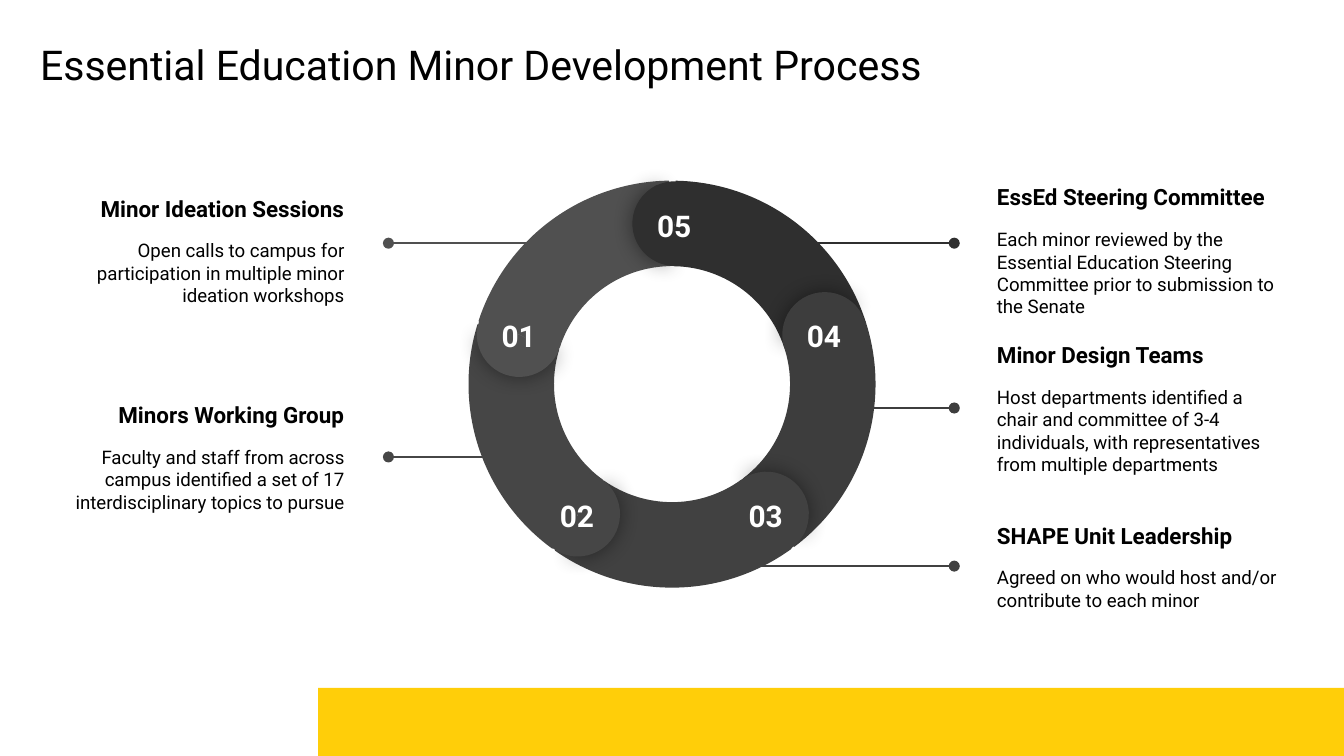
import math
from typing import NamedTuple

import pptx
import pptx.dml.color
import pptx.enum.shapes
import pptx.enum.text
import pptx.oxml
import pptx.util
from lxml import etree

Pt = pptx.util.Pt
RGBColor = pptx.dml.color.RGBColor
MSO_SHAPE = pptx.enum.shapes.MSO_SHAPE
PP_ALIGN = pptx.enum.text.PP_ALIGN
MSO_ANCHOR = pptx.enum.text.MSO_ANCHOR

BLACK = RGBColor(0x00, 0x00, 0x00)
WHITE = RGBColor(0xFF, 0xFF, 0xFF)
YELLOW = RGBColor(0xFF, 0xCE, 0x09)
GREY_01 = RGBColor(0x50, 0x50, 0x50)
GREY_02 = RGBColor(0x46, 0x46, 0x46)
GREY_03 = RGBColor(0x41, 0x41, 0x41)
GREY_04 = RGBColor(0x3D, 0x3D, 0x3D)
GREY_05 = RGBColor(0x2F, 0x2F, 0x2F)

FONT = "Roboto"
INSET = 7.2
RING_X, RING_Y = 360, 205.8
RING_SIZE = 218
CAP_SIZE = 45.4
CAP_ORBIT = 86
DEGREE = 0.6  # one degree in python-pptx adjustment units
DRAWING_NS = "http://schemas.openxmlformats.org/drawingml/2006/main"


class Box(NamedTuple):
    left: float
    top: float
    width: float
    height: float

    def lengths(self) -> list:
        return [Pt(value) for value in self]


class Stage(NamedTuple):
    number: str
    heading: str
    detail: str
    grey: RGBColor
    angle: float
    on_left: bool
    text_top: float
    line_y: float
    line_start: float


STAGES = [
    Stage("01", "Minor Ideation Sessions",
          "Open calls to campus for participation in multiple minor ideation workshops",
          GREY_01, 198, True, 97.9, 130.3, 304.6),
    Stage("02", "Minors Working Group",
          "Faculty and staff from across campus identified a set of 17 "
          "interdisciplinary topics to pursue",
          GREY_02, 126, True, 208.4, 244.8, 281.5),
    Stage("03", "SHAPE Unit Leadership",
          "Agreed on who would host and/or contribute to each minor",
          GREY_03, 54, False, 267.1, 303.3, 366.5),
    Stage("04", "Minor Design Teams",
          "Host departments identified a chair and committee of 3-4 individuals, "
          "with representatives from multiple departments",
          GREY_04, -18, False, 182.3, 218.6, 442),
    Stage("05", "EssEd Steering Committee",
          "Each minor reviewed by the Essential Education Steering Committee "
          "prior to submission to the Senate",
          GREY_05, -89, False, 97.9, 130.3, 410.4),
]


def add_text_frame(shapes, box: Box, anchor=MSO_ANCHOR.TOP):
    frame = shapes.add_textbox(*box.lengths()).text_frame
    frame.word_wrap = True
    frame.vertical_anchor = anchor
    frame.margin_left = frame.margin_right = Pt(INSET)
    frame.margin_top = frame.margin_bottom = Pt(INSET)
    return frame


def write(paragraph, text: str, *, size: float, color: RGBColor = BLACK,
          bold: bool = False, align=PP_ALIGN.LEFT, before: float = 0,
          after: float = 0) -> None:
    paragraph.alignment = align
    paragraph.space_before = Pt(before)
    paragraph.space_after = Pt(after)
    run = paragraph.add_run()
    run.text = text
    run.font.name = FONT
    run.font.size = Pt(size)
    run.font.bold = bold
    run.font.color.rgb = color


def add_filled(shapes, preset, box: Box, color: RGBColor, rotation: float = 0,
               adjustments: tuple = ()):
    shape = shapes.add_shape(preset, *box.lengths())
    shape.shadow.inherit = False
    shape.fill.solid()
    shape.fill.fore_color.rgb = color
    shape.line.fill.background()
    shape.rotation = rotation % 360
    for index, value in enumerate(adjustments):
        shape.adjustments[index] = value
    return shape


def add_glow_shadow(shape) -> None:
    """Put a soft black shadow evenly around the shape."""
    effects = shape.element.spPr.find(f"{{{DRAWING_NS}}}effectLst")
    effects.append(pptx.oxml.parse_xml(
        f'<a:outerShdw xmlns:a="{DRAWING_NS}" blurRad="{Pt(11.2)}" dist="0" dir="0" '
        'algn="ctr" rotWithShape="0"><a:srgbClr val="000000">'
        '<a:alpha val="43000"/></a:srgbClr></a:outerShdw>'))


def add_leader(shapes, stage: Stage, end: float) -> None:
    """Draw the line from the ring that ends in a dot by the text."""
    leader = shapes.add_connector(
        pptx.enum.shapes.MSO_CONNECTOR.STRAIGHT,
        Pt(stage.line_start), Pt(stage.line_y), Pt(end), Pt(stage.line_y))
    leader.line.color.rgb = stage.grey
    leader.line.width = Pt(0.75)
    etree.SubElement(leader.line._get_or_add_ln(), f"{{{DRAWING_NS}}}tailEnd", type="oval")
    etree.SubElement(leader.element.spPr, f"{{{DRAWING_NS}}}effectLst")


def add_callout(shapes, stage: Stage) -> None:
    align = PP_ALIGN.RIGHT if stage.on_left else PP_ALIGN.LEFT
    add_leader(shapes, stage, 208.1 if stage.on_left else 511.2)
    box = Box(24.5 if stage.on_left else 527, stage.text_top, 167, 72.7)
    frame = add_text_frame(shapes, box, MSO_ANCHOR.MIDDLE)
    write(frame.paragraphs[0], stage.heading, size=12, bold=True, align=align)
    write(frame.add_paragraph(), stage.detail, size=10, align=align, before=9.4, after=16)


def add_segment(shapes, stage: Stage) -> None:
    box = Box(RING_X - RING_SIZE / 2, RING_Y - RING_SIZE / 2, RING_SIZE, RING_SIZE)
    add_filled(shapes, MSO_SHAPE.BLOCK_ARC, box, stage.grey, stage.angle + 150,
               (210 * DEGREE, 281.13 * DEGREE, 0.21))


def add_cap(shapes, stage: Stage) -> None:
    """Round off a segment: a shadowed leading half, a plain half, the number."""
    x = RING_X + CAP_ORBIT * math.cos(math.radians(stage.angle))
    y = RING_Y + CAP_ORBIT * math.sin(math.radians(stage.angle))
    box = Box(x - CAP_SIZE / 2, y - CAP_SIZE / 2, CAP_SIZE, CAP_SIZE)
    leading = add_filled(shapes, MSO_SHAPE.PIE, box, stage.grey, stage.angle + 85.1,
                         (103.17 * DEGREE, 249.94 * DEGREE))
    add_glow_shadow(leading)
    add_filled(shapes, MSO_SHAPE.PIE, box, stage.grey, stage.angle + 264.4,
               (67.14 * DEGREE, 286.4 * DEGREE))


def add_number(shapes, stage: Stage) -> None:
    x = RING_X + CAP_ORBIT * math.cos(math.radians(stage.angle))
    y = RING_Y + CAP_ORBIT * math.sin(math.radians(stage.angle))
    frame = add_text_frame(shapes, Box(x - 20.5, y - 16, 40.3, 20.9))
    write(frame.paragraphs[0], stage.number, size=16, color=WHITE, bold=True,
          align=PP_ALIGN.CENTER)


def main() -> None:
    deck = pptx.Presentation()
    deck.slide_width, deck.slide_height = Pt(720), Pt(405)
    slide = deck.slides.add_slide(deck.slide_layouts[6])

    add_filled(slide.shapes, MSO_SHAPE.RECTANGLE, Box(170.4, 368.6, 549.6, 36.4), YELLOW)
    title = add_text_frame(slide.shapes, Box(14.4, 13.7, 565.2, 41))
    write(title.paragraphs[0], "Essential Education Minor Development Process", size=22)

    for stage in STAGES:
        add_callout(slide.shapes.add_group_shape().shapes, stage)

    ring = slide.shapes.add_group_shape().shapes
    for draw in (add_segment, add_cap, add_number):
        for stage in STAGES:
            draw(ring, stage)

    deck.save("out.pptx")


if __name__ == "__main__":
    main()
